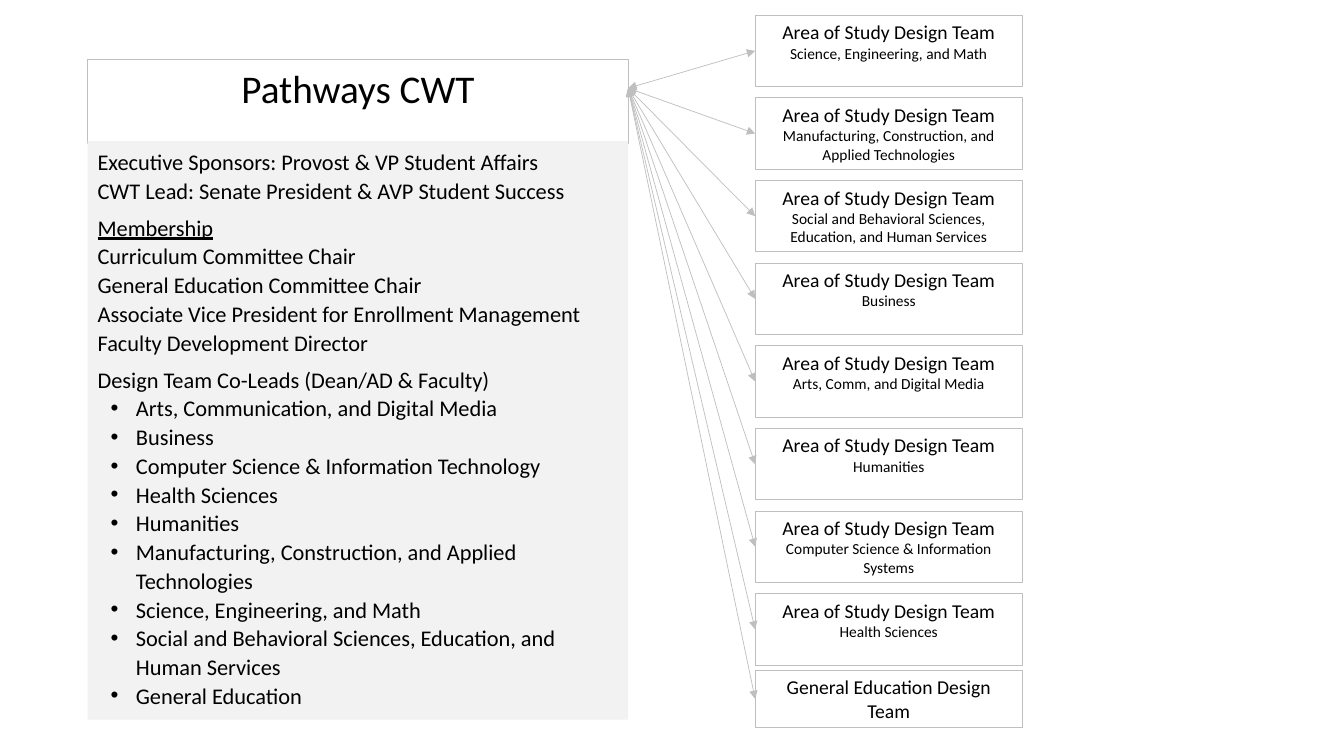
import pptx
import pptx.dml.color
import pptx.enum.shapes
import pptx.enum.text
import pptx.oxml.xmlchemy
import pptx.util
from pptx.util import Inches

COLORS = {"text": "000000", "outline": "BFBFBF", "panel": "F2F2F2"}
FONT = "Calibri"
ALIGN = pptx.enum.text.PP_ALIGN

TEAM_NAME = "Area of Study Design Team"
STUDY_AREAS = [
    "Science, Engineering, and Math",
    "Manufacturing, Construction, and Applied Technologies",
    "Social and Behavioral Sciences, Education, and Human Services",
    "Business",
    "Arts, Comm, and Digital Media",
    "Humanities",
    "Computer Science & Information Systems",
    "Health Sciences",
]
LEADERSHIP = [
    "Executive Sponsors: Provost & VP Student Affairs",
    "CWT Lead: Senate President & AVP Student Success",
]
MEMBERS = [
    "Curriculum Committee Chair",
    "General Education Committee Chair",
    "Associate Vice President for Enrollment Management",
    "Faculty Development Director",
]
CO_LEADS = [
    "Arts, Communication, and Digital Media",
    "Business",
    "Computer Science & Information Technology",
    "Health Sciences",
    "Humanities",
    "Manufacturing, Construction, and Applied Technologies",
    "Science, Engineering, and Math",
    "Social and Behavioral Sciences, Education, and Human Services",
    "General Education",
]


class SlideBuilder:
    def __init__(self, slide):
        self.slide = slide

    def color(self, name):
        return pptx.dml.color.RGBColor.from_string(COLORS[name])

    def prepare_text(self, shape):
        frame = shape.text_frame
        frame.word_wrap = True
        frame.auto_size = pptx.enum.text.MSO_AUTO_SIZE.SHAPE_TO_FIT_TEXT
        frame.vertical_anchor = pptx.enum.text.MSO_ANCHOR.TOP
        frame.margin_left = frame.margin_right = Inches(0.1)
        frame.margin_top = frame.margin_bottom = Inches(0.05)

    def outline(self, shape, width=0.75):
        shape.line.color.rgb = self.color("outline")
        shape.line.width = pptx.util.Pt(width)

    def add_text(self, shape, text, size, align, underline=False):
        frame = shape.text_frame
        paragraph = frame.paragraphs[-1]
        if paragraph.runs:
            paragraph = frame.add_paragraph()
        paragraph.alignment = align
        run = paragraph.add_run()
        run.text = text
        run.font.name = FONT
        run.font.size = pptx.util.Pt(size)
        run.font.color.rgb = self.color("text")
        if underline:
            run.font.underline = True
        return paragraph

    def title(self, text, left, top, width, height):
        shape = self.slide.shapes.title
        shape.left, shape.top = Inches(left), Inches(top)
        shape.width, shape.height = Inches(width), Inches(height)
        self.outline(shape)
        self.prepare_text(shape)
        self.add_text(shape, text, 28, ALIGN.CENTER)
        return shape

    def rectangle(self, left, top, width, height):
        shape = self.slide.shapes.add_shape(
            pptx.enum.shapes.MSO_SHAPE.RECTANGLE,
            Inches(left), Inches(top), Inches(width), Inches(height))
        shape.shadow.inherit = False
        self.prepare_text(shape)
        return shape

    def team_box(self, top, height, name, area=None):
        shape = self.rectangle(7.49, top, 2.65, height)
        shape.fill.background()
        self.outline(shape)
        self.add_text(shape, name, 14, ALIGN.CENTER)
        if area:
            self.add_text(shape, area, 11, ALIGN.CENTER)
        return shape

    def panel(self, left, top, width, height):
        shape = self.rectangle(left, top, width, height)
        shape.fill.solid()
        shape.fill.fore_color.rgb = self.color("panel")
        shape.line.fill.background()
        return shape

    def panel_line(self, shape, text, space_after=0, underline=False, bullet=False):
        paragraph = self.add_text(shape, text, 16, ALIGN.LEFT, underline)
        paragraph.line_spacing = 1.07
        paragraph.space_after = pptx.util.Pt(space_after)
        if bullet:
            properties = paragraph._p.get_or_add_pPr()
            properties.set("marL", str(Inches(0.38)))
            properties.set("indent", str(Inches(-0.25)))
            for tag, name, value in (("a:buFont", "typeface", "Arial"), ("a:buChar", "char", "•")):
                element = pptx.oxml.xmlchemy.OxmlElement(tag)
                element.set(name, value)
                properties.append(element)

    def double_arrow(self, source, target):
        connector = self.slide.shapes.add_connector(
            pptx.enum.shapes.MSO_CONNECTOR.STRAIGHT, 0, 0, 0, 0)
        connector.begin_connect(source, 3)
        connector.end_connect(target, 1)
        self.outline(connector, 0.5)
        line = connector.line._get_or_add_ln()
        for tag in ("a:headEnd", "a:tailEnd"):
            end = pptx.oxml.xmlchemy.OxmlElement(tag)
            end.set("type", "triangle")
            line.append(end)
        connector._element.spPr.append(pptx.oxml.xmlchemy.OxmlElement("a:effectLst"))


def main():
    presentation = pptx.Presentation()
    presentation.slide_width = Inches(13.33)
    presentation.slide_height = Inches(7.5)
    builder = SlideBuilder(presentation.slides.add_slide(presentation.slide_layouts[5]))

    title = builder.title("Pathways CWT", 0.87, 0.59, 5.36, 0.57)
    teams = [builder.team_box(0.15 + 0.82 * index, 0.71, TEAM_NAME, area)
             for index, area in enumerate(STUDY_AREAS)]
    teams.append(builder.team_box(6.65, 0.57, "General Education Design Team"))
    for team in teams:
        builder.double_arrow(title, team)

    panel = builder.panel(0.87, 1.4, 5.36, 5.74)
    for group in (LEADERSHIP, MEMBERS):
        if group is MEMBERS:
            builder.panel_line(panel, "Membership", underline=True)
        for text in group:
            builder.panel_line(panel, text, space_after=6 if text == group[-1] else 0)
    builder.panel_line(panel, "Design Team Co-Leads (Dean/AD & Faculty)")
    for text in CO_LEADS:
        builder.panel_line(panel, text, bullet=True)

    presentation.save("out.pptx")


if __name__ == "__main__":
    main()
